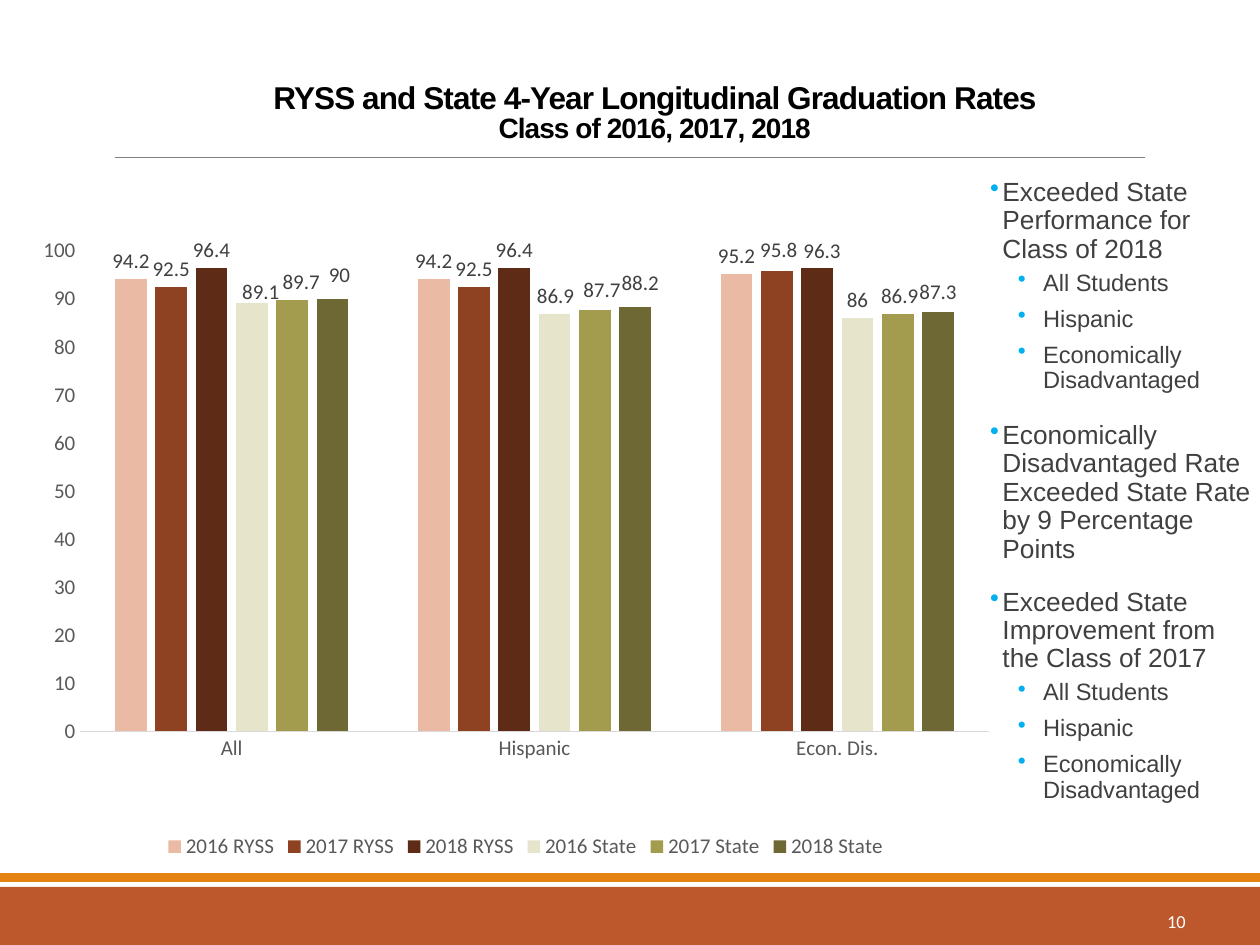
"""Build the graduation rates slide: RYSS against the state, classes of 2016 to 2018."""
import lxml.etree
import pptx
import pptx.chart.data
import pptx.dml.color
import pptx.enum.chart
import pptx.enum.shapes
import pptx.enum.text
import pptx.oxml.ns
import pptx.util

Cm = pptx.util.Cm
Pt = pptx.util.Pt
qn = pptx.oxml.ns.qn
ALIGN = pptx.enum.text.PP_ALIGN
ANCHOR = pptx.enum.text.MSO_ANCHOR


def color(hex_value):
    return pptx.dml.color.RGBColor.from_string(hex_value)


def style(font, name, size, hex_value, bold=False):
    font.name = name
    font.size = Pt(size)
    font.bold = bold
    font.color.rgb = color(hex_value)


deck = pptx.Presentation()
deck.slide_width, deck.slide_height = Cm(25.4), Cm(19.05)
slide = deck.slides.add_slide(deck.slide_layouts[6])
shapes = slide.shapes

for top, height, fill in [(17.88, 1.17, "BD582C"), (17.6, 0.18, "E48312")]:
    band = shapes.add_shape(pptx.enum.shapes.MSO_SHAPE.RECTANGLE, 0, Cm(top), Cm(25.4), Cm(height))
    band.shadow.inherit = False
    band.fill.solid()
    band.fill.fore_color.rgb = color(fill)
    band.line.fill.background()

title_rule = shapes.add_connector(
    pptx.enum.shapes.MSO_CONNECTOR.STRAIGHT, Cm(2.31), Cm(3.17), Cm(23.09), Cm(3.17))
title_rule.line.color.rgb = color("808080")
title_rule.line.width = Pt(0.5)
lxml.etree.SubElement(title_rule.element.spPr, qn("a:effectLst"))

page_number = shapes.add_textbox(Cm(21.41), Cm(18.06), Cm(2.74), Cm(1.02))
page_number.text_frame.word_wrap = True
page_number.text_frame.vertical_anchor = ANCHOR.MIDDLE
paragraph = page_number.text_frame.paragraphs[0]
paragraph.alignment = ALIGN.RIGHT
run = paragraph.add_run()
run.text = "10"
style(run.font, "Calibri", 10.5, "FFFFFF")

title = shapes.add_textbox(Cm(2.72), Cm(0.86), Cm(20.96), Cm(2.18))
title.text_frame.word_wrap = True
title.text_frame.vertical_anchor = ANCHOR.BOTTOM
paragraph = title.text_frame.paragraphs[0]
paragraph.alignment = ALIGN.CENTER
paragraph.line_spacing = 0.85
run = paragraph.add_run()
run.text = "RYSS and State 4-Year Longitudinal Graduation Rates"
style(run.font, "Arial", 18, "000000", True)
paragraph.add_line_break()
run = paragraph.add_run()
run.text = "Class of 2016, 2017, 2018"
style(run.font, "Arial", 16, "000000", True)
for properties in title.element.xpath(".//a:rPr"):
    properties.set("spc", "-50")

# name, values, color, label shifts by category in percent of the chart size
rates = [
    ("2016 RYSS", (94.2, 94.2, 95.2), "EABAA5", {}),
    ("2017 RYSS", (92.5, 92.5, 95.8), "8E4221", {2: (0.2, -0.4)}),
    ("2018 RYSS", (96.4, 96.4, 96.3), "5E2C16", {2: (0.5, 0)}),
    ("2016 State", (89.1, 86.9, 86), "E7E4CC", {0: (0.9, 0.9), 1: (0.1, 0), 2: (0, 0)}),
    ("2017 State", (89.7, 87.7, 86.9), "A39B4E", {0: (0.9, 0), 1: (0.7, -0.3), 2: (0.2, 0)}),
    ("2018 State", (90, 88.2, 87.3), "6D6834", {0: (0.7, -0.9), 1: (0.5, -1), 2: (0, -0.3)}),
]
chart_data = pptx.chart.data.CategoryChartData()
chart_data.categories = ["All", "Hispanic", "Econ. Dis."]
for name, values, fill, shifts in rates:
    chart_data.add_series(name, values)
chart = shapes.add_chart(
    pptx.enum.chart.XL_CHART_TYPE.COLUMN_CLUSTERED,
    Cm(0.51), Cm(3.48), Cm(20.17), Cm(13.94), chart_data).chart
style(chart.font, "Calibri", 12, "000000")
chart.has_title = False
chart.has_legend = True
chart.legend.position = pptx.enum.chart.XL_LEGEND_POSITION.BOTTOM
chart.legend.include_in_layout = False
style(chart.legend.font, "Calibri", 12, "595959")

for axis in (chart.category_axis, chart.value_axis):
    axis.major_tick_mark = axis.minor_tick_mark = pptx.enum.chart.XL_TICK_MARK.NONE
    axis.has_major_gridlines = False
    style(axis.tick_labels.font, "Calibri", 12, "595959")
chart.category_axis.format.line.color.rgb = color("D9D9D9")
chart.category_axis.format.line.width = Pt(0.75)
chart.value_axis.format.line.fill.background()
chart.value_axis.minimum_scale = 0
chart.value_axis.maximum_scale = 100
chart.value_axis.major_unit = 10

columns = chart.plots[0]
columns.vary_by_categories = False
columns.gap_width = 219
columns.overlap = -27
layouts = []
outside = pptx.enum.chart.XL_LABEL_POSITION.OUTSIDE_END
for series, (name, values, fill, shifts) in zip(columns.series, rates):
    series.format.fill.solid()
    series.format.fill.fore_color.rgb = color(fill)
    labels = series.data_labels
    labels.show_value = True
    labels.position = outside
    style(labels.font, "Calibri", 12, "404040")
    for category, (x, y) in shifts.items():
        label = series.points[category].data_label
        label.position = outside
        style(label.font, "Calibri", 12, "404040")
        layouts.append({"x": x / 100, "y": y / 100})

for shifted_label, layout in zip(chart.element.xpath(".//c:dLbl"), layouts):
    holder = lxml.etree.Element(qn("c:layout"))
    shifted_label.insert(1, holder)
    manual = lxml.etree.SubElement(holder, qn("c:manualLayout"))
    for key, value in layout.items():
        lxml.etree.SubElement(manual, qn("c:" + key)).set("val", str(value))

plot_area = chart.element.xpath(".//c:plotArea")[0]
for old_layout in plot_area.findall(qn("c:layout")):
    plot_area.remove(old_layout)
holder = lxml.etree.Element(qn("c:layout"))
plot_area.insert(0, holder)
manual = lxml.etree.SubElement(holder, qn("c:manualLayout"))
for key, value in [("layoutTarget", "inner"), ("xMode", "edge"), ("yMode", "edge"),
                   ("x", 0.055), ("y", 0.113), ("w", 0.908), ("h", 0.695)]:
    lxml.etree.SubElement(manual, qn("c:" + key)).set("val", str(value))

groups = ["All Students", "Hispanic", "Economically Disadvantaged"]
findings = [
    ("Exceeded State Performance for Class of 2018", groups),
    ("Economically Disadvantaged Rate Exceeded State Rate by 9 Percentage Points", []),
    ("Exceeded State Improvement from the Class of 2017", groups),
]
lines = []
for finding, details in findings:
    lines += [(0, finding)] + [(1, detail) for detail in details]
# size, space before, space after, left margin, hanging indent
levels = [(15, 12, 2, 0.25, 0.25), (13.5, 2, 4, 1.07, 0.51)]

summary = shapes.add_textbox(Cm(19.96), Cm(3.48), Cm(5.38), Cm(13.94))
frame = summary.text_frame
frame.word_wrap = True
frame.margin_left = frame.margin_right = 0
for index, (level, text) in enumerate(lines):
    size, before, after, margin, hanging = levels[level]
    paragraph = frame.add_paragraph() if index else frame.paragraphs[0]
    paragraph.level = level
    paragraph.line_spacing = 0.9
    paragraph.space_before = Pt(before)
    paragraph.space_after = Pt(after)
    run = paragraph.add_run()
    run.text = text
    style(run.font, "Arial", size, "404040")
    properties = summary.element.xpath(".//a:pPr")[-1]
    properties.set("marL", str(Cm(margin)))
    properties.set("indent", str(-Cm(hanging)))
    bullet_color = lxml.etree.SubElement(properties, qn("a:buClr"))
    lxml.etree.SubElement(bullet_color, qn("a:srgbClr")).set("val", "00B0F0")
    lxml.etree.SubElement(properties, qn("a:buChar")).set("char", "•")

deck.save("out.pptx")
